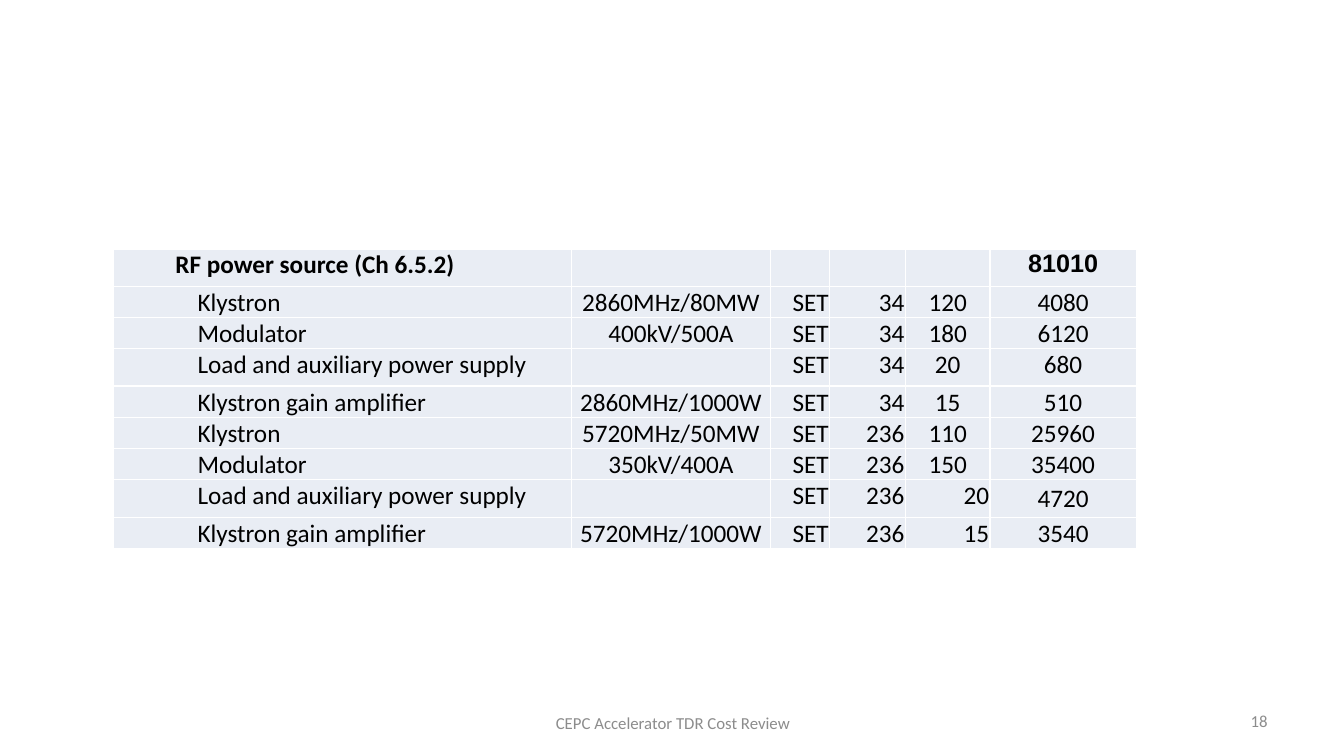
from lxml.etree import SubElement
from pptx import Presentation
from pptx.dml.color import RGBColor
from pptx.enum.text import MSO_ANCHOR, PP_ALIGN
from pptx.oxml.ns import qn
from pptx.util import Inches, Pt

BLACK = RGBColor(0x00, 0x00, 0x00)
GREY = RGBColor(0x8C, 0x8C, 0x8C)
PALE_BLUE = RGBColor(0xE9, 0xED, 0xF4)
WHITE = RGBColor(0xFF, 0xFF, 0xFF)
LEFT, CENTER, RIGHT = PP_ALIGN.LEFT, PP_ALIGN.CENTER, PP_ALIGN.RIGHT

COLUMN_WIDTHS = (4.55, 1.97, 0.59, 0.75, 0.84, 1.45)
COLUMN_ALIGNS = (LEFT, CENTER, RIGHT, RIGHT, CENTER, CENTER)
LOW_ROW, TALL_ROW = 0.31, 0.37
HEADING_INDENT, ITEM_INDENT = 0.62, 0.84

# item, specification, quantity, unit price
ITEMS = [
    ("Klystron", "2860MHz/80MW", 34, 120),
    ("Modulator", "400kV/500A", 34, 180),
    ("Load and auxiliary power supply", "", 34, 20),
    ("Klystron gain amplifier", "2860MHz/1000W", 34, 15),
    ("Klystron", "5720MHz/50MW", 236, 110),
    ("Modulator", "350kV/400A", 236, 150),
    ("Load and auxiliary power supply", "", 236, 20),
    ("Klystron gain amplifier", "5720MHz/1000W", 236, 15),
]


class CostSlide:
    def __init__(self, slide, font="Calibri", table_size=18, footer_size=12):
        self.slide = slide
        self.font = font
        self.table_size = table_size
        self.footer_size = footer_size

    def set_text(self, paragraph, text, align, size, color, **extra):
        paragraph.text = text
        paragraph.alignment = align
        paragraph.font.color.rgb = color
        for name, value in {"name": self.font, "size": Pt(size), **extra}.items():
            setattr(paragraph.font, name, value)

    def footer(self, text, box, align):
        frame = self.slide.shapes.add_textbox(*map(Inches, box)).text_frame
        frame.word_wrap = True
        frame.vertical_anchor = MSO_ANCHOR.MIDDLE
        self.set_text(frame.paragraphs[0], text, align, self.footer_size, GREY)

    def table(self, left, top, widths, heights):
        """Add an unbanded table and return it."""
        box = (left, top, sum(widths), sum(heights))
        table = self.slide.shapes.add_table(
            len(heights), len(widths), *map(Inches, box)).table
        table.first_row = table.horz_banding = False
        for column, width in zip(table.columns, widths):
            column.width = Inches(width)
        for row, height in zip(table.rows, heights):
            row.height = Inches(height)
        return table

    def cell(self, cell, text, align, indent=0.01, anchor=MSO_ANCHOR.TOP, **font):
        layout = {
            "margin_left": Inches(indent), "margin_right": Inches(0.01),
            "margin_top": Inches(0.01), "margin_bottom": 0,
            "vertical_anchor": anchor,
        }
        for name, value in layout.items():
            setattr(cell, name, value)
        self.set_text(cell.text_frame.paragraphs[0], text, align,
                      self.table_size, BLACK, **font)
        self.borders(cell)
        cell.fill.solid()
        cell.fill.fore_color.rgb = PALE_BLUE

    def borders(self, cell):
        properties = cell._tc.get_or_add_tcPr()
        for side in ("a:lnL", "a:lnR", "a:lnT", "a:lnB"):
            line = SubElement(properties, qn(side), w=str(Pt(1)))
            fill = SubElement(line, qn("a:solidFill"))
            SubElement(fill, qn("a:srgbClr"), val=str(WHITE))


def add_costs(page):
    heights = [TALL_ROW] + [LOW_ROW if spec else TALL_ROW for _, spec, _, _ in ITEMS]
    costs = page.table(1.12, 2.47, COLUMN_WIDTHS, heights)
    total = sum(quantity * price for _, _, quantity, price in ITEMS)
    heading = ("RF power source (Ch 6.5.2)", "", "", "", "", str(total))
    for column, (text, align) in enumerate(zip(heading, COLUMN_ALIGNS)):
        page.cell(costs.cell(0, column), text, align, bold=True,
                  indent=0.01 if column else HEADING_INDENT,
                  name="Arial" if column == 5 else page.font)

    for row, (item, spec, quantity, price) in enumerate(ITEMS, start=1):
        values = (item, spec, "SET", quantity, price, quantity * price)
        for column, (value, align) in enumerate(zip(values, COLUMN_ALIGNS)):
            price_to_right = column == 4 and row >= 7
            centred = column == 5 and 5 <= row <= 7
            page.cell(costs.cell(row, column), str(value),
                      RIGHT if price_to_right else align,
                      indent=0.01 if column else ITEM_INDENT,
                      anchor=MSO_ANCHOR.MIDDLE if centred else MSO_ANCHOR.TOP)


def main():
    deck = Presentation()
    deck.slide_width, deck.slide_height = Inches(13.33), Inches(7.5)
    page = CostSlide(deck.slides.add_slide(deck.slide_layouts[6]))
    page.footer("18", (9.56, 6.95, 3.11, 0.4), RIGHT)
    page.footer("CEPC Accelerator TDR Cost Review", (3.92, 6.98, 5.51, 0.39), CENTER)
    add_costs(page)
    deck.save("out.pptx")


if __name__ == "__main__":
    main()
